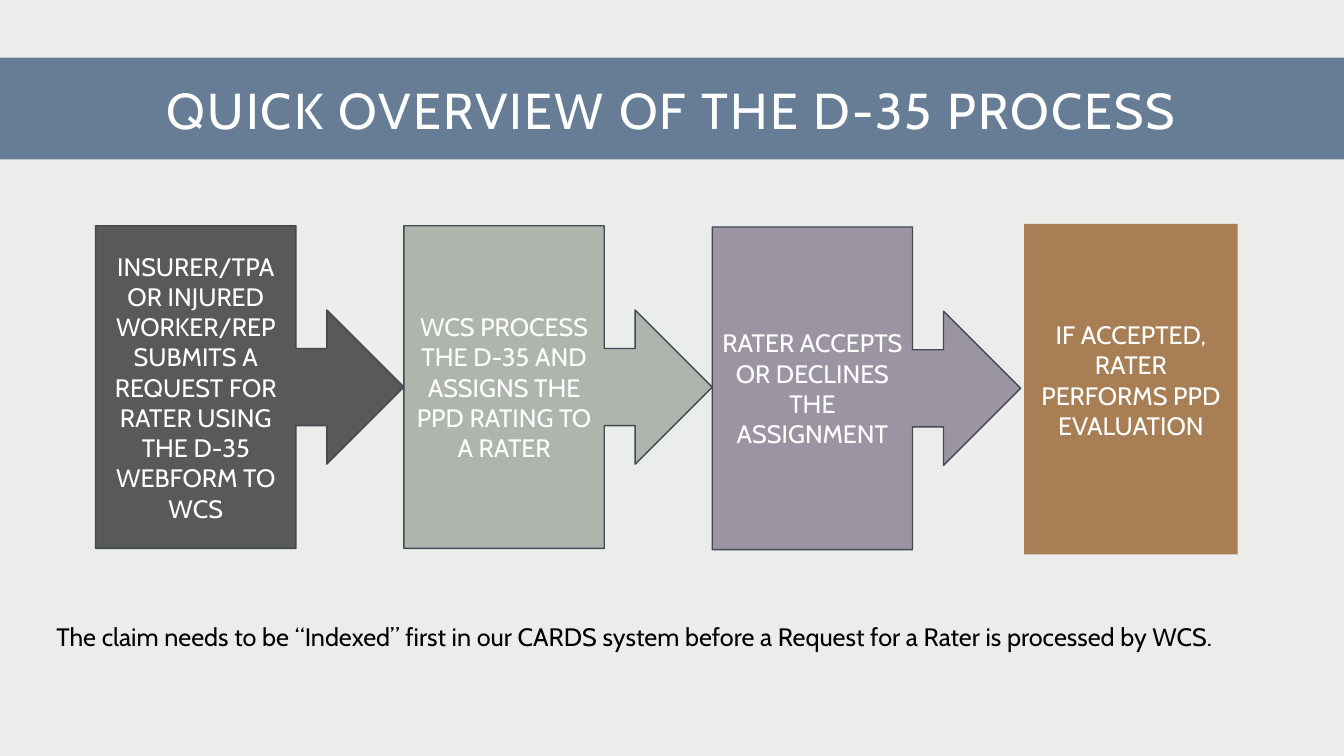
from pptx import Presentation
from pptx.dml.color import RGBColor
from pptx.enum import shapes, text
from pptx.util import Cm, Pt

WIDE = 33.87
PITCH = 7.77
STEPS = [
    ("INSURER/TPA OR INJURED WORKER/REP SUBMITS A REQUEST FOR RATER USING "
     "THE D-35 WEBFORM TO WCS", "595959", 5.69),
    ("WCS PROCESS THE D-35 AND ASSIGNS THE PPD RATING TO A RATER",
     "ADB5AD", 5.69),
    ("RATER ACCEPTS OR DECLINES THE ASSIGNMENT", "9B95A3", 5.72),
]


def paint(fill, color):
    fill.solid()
    fill.fore_color.rgb = RGBColor.from_string(color)


def write(shape, words, size=18, color="FFFFFF", center=True):
    frame = shape.text_frame
    frame.word_wrap = True
    para = frame.paragraphs[0]
    para.alignment = text.PP_ALIGN.CENTER if center else text.PP_ALIGN.LEFT
    run = para.add_run()
    run.text = words
    run.font.name = "Cabin"
    run.font.size = Pt(size)
    paint(run.font.fill, color)
    return run


def block(slide, kind, box, color, edge=None):
    """Add a filled shape; box is left, top, width, height in cm."""
    shape = slide.shapes.add_shape(kind, *map(Cm, box))
    shape.shadow.inherit = False
    paint(shape.fill, color)
    if edge:
        paint(shape.line.fill, edge)
        shape.line.width = Pt(1)
    else:
        shape.line.fill.background()
    shape.text_frame.vertical_anchor = text.MSO_ANCHOR.MIDDLE
    return shape


def title(slide, words):
    band = block(slide, shapes.MSO_SHAPE.RECTANGLE,
                 (0, 1.45, WIDE, 2.57), "667D95")
    frame = band.text_frame
    frame.margin_left = frame.margin_right = frame.margin_top = Cm(0.3)
    frame.margin_bottom = Cm(0.25)
    run = write(band, words, 36)
    run.font._element.set("spc", "150")


def step(slide, left, top, words, color):
    shape = block(slide, shapes.MSO_SHAPE.RIGHT_ARROW_CALLOUT,
                  (left, top, PITCH, 8.13), color, "424951")
    write(shape, words)


def result(slide, words):
    shape = block(slide, shapes.MSO_SHAPE.RECTANGLE,
                  (25.81, 5.64, 5.38, 8.33), "A87F55")
    shape.text_frame.vertical_anchor = text.MSO_ANCHOR.TOP
    shape.text_frame.margin_top = Cm(2.41)
    write(shape, words)


def note(slide, words):
    box = slide.shapes.add_textbox(Cm(1.17), Cm(15.54), Cm(31.52), Cm(1.02))
    write(box, words, color="000000", center=False)


def main():
    deck = Presentation()
    deck.slide_width, deck.slide_height = Cm(WIDE), Cm(19.05)
    slide = deck.slides.add_slide(deck.slide_layouts[6])
    paint(slide.background.fill, "EBEDEB")
    title(slide, "QUICK OVERVIEW OF THE D-35 PROCESS")
    for i, (words, color, top) in enumerate(STEPS):
        step(slide, 2.41 + i * PITCH, top, words, color)
    note(slide, "The claim needs to be “Indexed” first in our CARDS system "
                "before a Request for a Rater is processed by WCS.")
    result(slide, "IF ACCEPTED, RATER PERFORMS PPD EVALUATION")
    deck.save("out.pptx")


if __name__ == "__main__":
    main()
